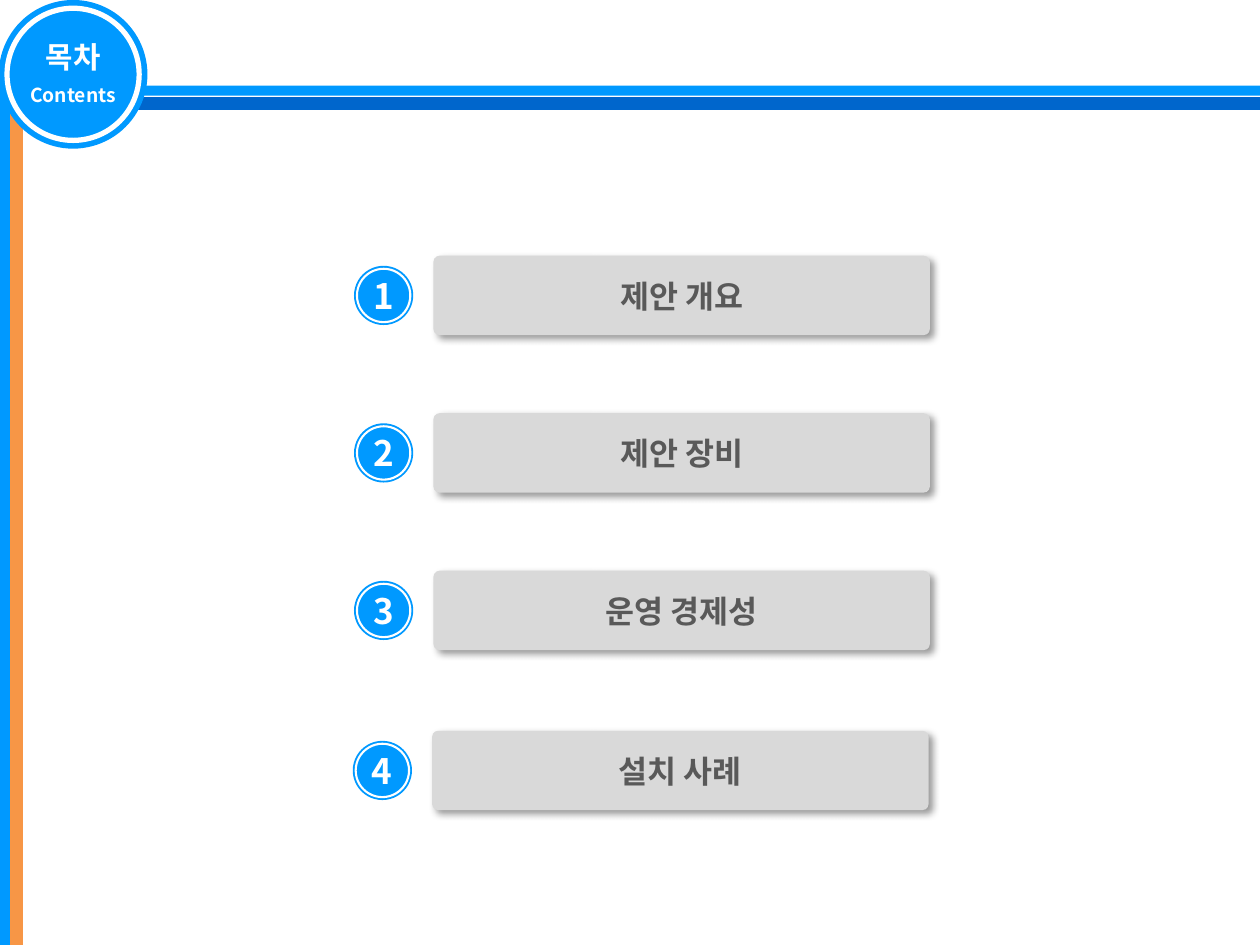
from lxml.etree import SubElement
from pptx import Presentation
from pptx.dml.color import RGBColor
from pptx.enum.shapes import MSO_SHAPE as Kind
from pptx.enum.text import MSO_ANCHOR as Anchor, PP_ALIGN as Align
from pptx.oxml.ns import qn
from pptx.util import Inches, Pt

FONT = "Noto Sans CJK KR"
BLUE = RGBColor(0x00, 0x99, 0xFF)
NAVY = RGBColor(0x00, 0x66, 0xCC)
ORANGE = RGBColor(0xF7, 0x96, 0x46)
GRAY = RGBColor(0xD9, 0xD9, 0xD9)
DARK = RGBColor(0x59, 0x59, 0x59)
WHITE = RGBColor(0xFF, 0xFF, 0xFF)

ITEMS = [
    ("제안 개요", 3.44, 2.03),
    ("제안 장비", 3.44, 3.28),
    ("운영 경제성", 3.44, 4.53),
    ("설치 사례", 3.43, 5.8),
]


def add_shape(shapes, kind, box, fill, line=None):
    """Add a flat filled shape with an optional 2 pt outline."""
    shape = shapes.add_shape(kind, *map(Inches, box))
    shape.shadow.inherit = False
    shape.fill.solid()
    shape.fill.fore_color.rgb = fill
    if line is None:
        shape.line.fill.background()
    else:
        shape.line.color.rgb = line
        shape.line.width = Pt(2)
    return shape


def set_text(shape, text, size, color):
    """Write one centred bold line in the middle of a shape."""
    frame = shape.text_frame
    frame.text = text
    frame.word_wrap = True
    frame.vertical_anchor = Anchor.MIDDLE
    frame.margin_left = frame.margin_right = 0
    frame.margin_top = frame.margin_bottom = 0
    para = frame.paragraphs[0]
    para.alignment = Align.CENTER
    font = para.runs[0].font
    font.name, font.size, font.bold = FONT, Pt(size), True
    font.color.rgb = color
    props = para.runs[0]._r.get_or_add_rPr()
    SubElement(props, qn("a:ea"), typeface=FONT)


def add_shadow(shape):
    """Cast a soft shadow to the lower right."""
    effects = shape._element.spPr.find(qn("a:effectLst"))
    outer = SubElement(effects, qn("a:outerShdw"), blurRad=str(Pt(4)),
                       dist=str(Pt(3)), dir=str(45 * 60000),
                       algn="tl", rotWithShape="0")
    color = SubElement(outer, qn("a:srgbClr"), val="000000")
    SubElement(color, qn("a:alpha"), val="40000")


def add_badge(shapes, left, top, size, ring):
    """Add a group of a blue disc and a thin white ring; return both."""
    group = shapes.add_group_shape()
    disc = add_shape(group.shapes, Kind.OVAL, (left, top, size, size), BLUE)
    gap = (size - ring) / 2
    hoop = add_shape(group.shapes, Kind.DONUT,
                     (left + gap, top + gap, ring, ring), WHITE)
    hoop.adjustments[0] = 0.038
    return group, disc


def add_item(shapes, num, text, left, top):
    """Add one numbered entry of the contents."""
    disc = add_badge(shapes, left - 0.63, top + 0.08, 0.47, 0.44)[1]
    set_text(disc, str(num), 20, WHITE)
    bar = add_shape(shapes, Kind.ROUNDED_RECTANGLE,
                    (left, top, 3.94, 0.63), GRAY)
    bar.adjustments[0] = 0.077
    add_shadow(bar)
    set_text(bar, text, 18, DARK)


def add_frame(shapes):
    """Add the coloured bands along the top and left edges."""
    add_shape(shapes, Kind.RECTANGLE, (0, 0.68, 10, 0.08), BLUE)
    add_shape(shapes, Kind.RECTANGLE, (0, 0.78, 10, 0.08), NAVY, NAVY)
    add_shape(shapes, Kind.RECTANGLE, (0, 0.7, 0.08, 6.8), BLUE)
    add_shape(shapes, Kind.RECTANGLE, (0.09, 0.7, 0.08, 6.8), ORANGE, ORANGE)


def add_head(shapes):
    """Add the corner badge with the title and its subtitle."""
    group = add_badge(shapes, -0.01, 0, 1.18, 1.09)[0]
    sub = group.shapes.add_textbox(*map(Inches, (0, 0.61, 1.16, 0.29)))
    set_text(sub, "Contents", 11, WHITE)
    title = shapes.title
    title.left, title.top = Inches(0), Inches(0.25)
    title.width, title.height = Inches(1.16), Inches(0.4)
    set_text(title, "목차", 17, WHITE)
    shapes._spTree.append(title._element)


def main():
    """Build the contents slide."""
    deck = Presentation()
    deck.slide_width, deck.slide_height = Inches(10), Inches(7.5)
    shapes = deck.slides.add_slide(deck.slide_layouts[5]).shapes
    add_frame(shapes)
    for num, item in enumerate(ITEMS, 1):
        add_item(shapes, num, *item)
    add_head(shapes)
    deck.save("out.pptx")


if __name__ == "__main__":
    main()
